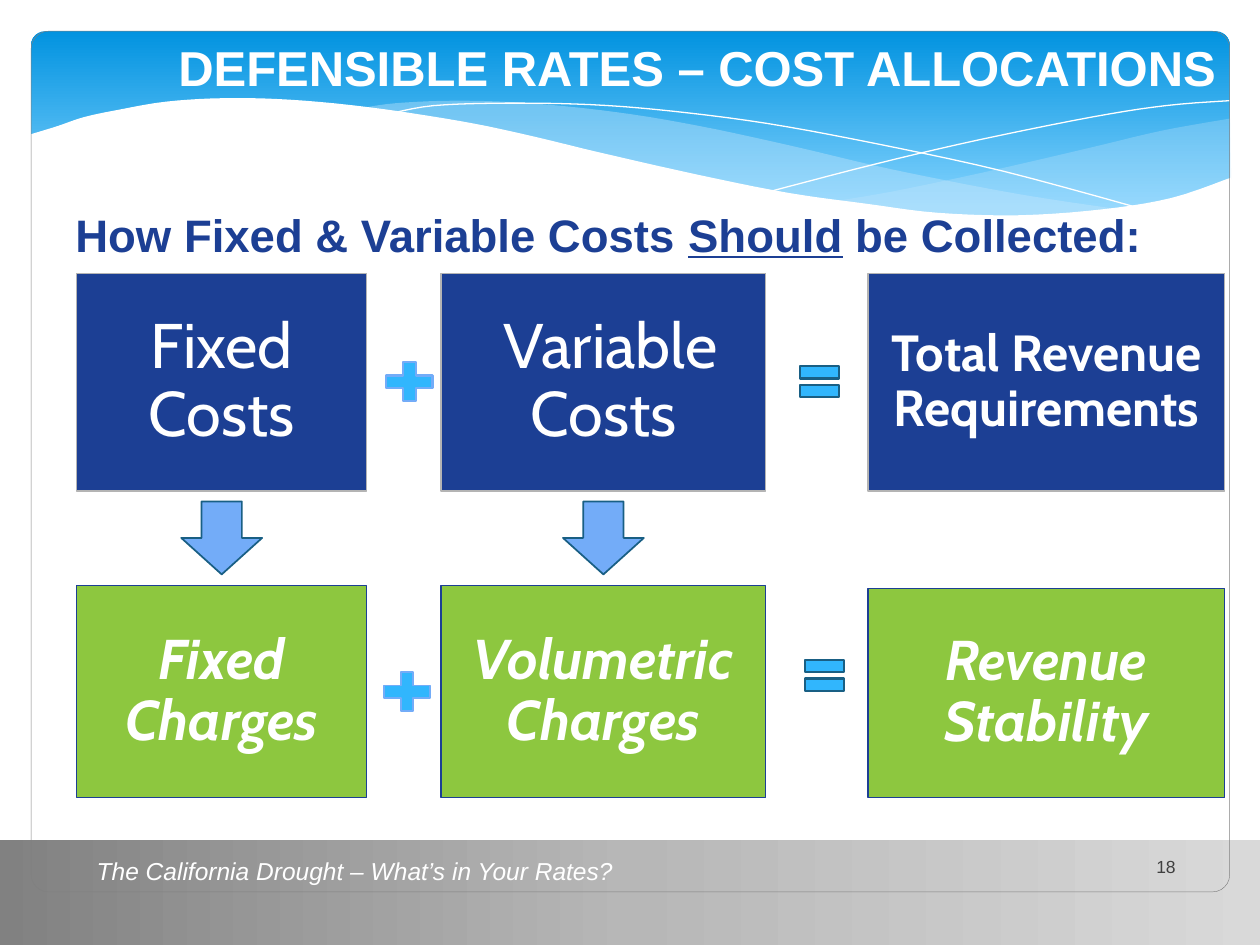
from copy import deepcopy
from dataclasses import dataclass

from lxml import etree
from pptx import Presentation
from pptx import util as u
from pptx.dml.color import RGBColor
from pptx.enum import shapes, text
from pptx.oxml.ns import qn

COLORS = {
    "white": "FFFFFF", "navy": "1C3F94", "green": "8DC73F", "sky": "31B6FD",
    "periwinkle": "73ACF8", "teal": "195F84", "silver": "B4B4B4",
    "mist": "C6E7FC", "frame": "808080", "number": "404040",
    "header_top": "0293E0", "header_bottom": "83D3FE",
    "footer_left": "818181", "footer_mid": "B7B7B7", "footer_right": "D9D9D9",
}
KIND = shapes.MSO_SHAPE
ALIGN = text.PP_ALIGN


@dataclass
class Area:
    left: float
    top: float
    width: float
    height: float

    def lengths(self) -> list:
        return [u.Cm(v) for v in (self.left, self.top, self.width, self.height)]


@dataclass
class Card:
    label: str
    area: Area
    fill: str
    line: str
    size: int
    inset: float
    bold: bool = True
    italic: bool = False


@dataclass
class Sign:
    kind: KIND
    area: Area
    fill: str
    line: str
    weight: float = 1.25


@dataclass
class Wave:
    """Smooth curves joined end to end; outlined if open, filled if closed."""
    curves: list
    fill: str = ""
    opacity: int = 100


def rgb(name: str) -> RGBColor:
    return RGBColor.from_string(COLORS[name])


def paint(shape, fill: str = "", line: str = "", weight: float = 0) -> None:
    shape.shadow.inherit = False
    if fill:
        shape.fill.solid()
        shape.fill.fore_color.rgb = rgb(fill)
    else:
        shape.fill.background()
    if line:
        shape.line.color.rgb = rgb(line)
        shape.line.width = u.Pt(weight)
    else:
        shape.line.fill.background()


def add_shape(page, kind, area: Area, fill="", line="", weight=0.0):
    shape = page.shapes.add_shape(kind, *area.lengths())
    paint(shape, fill, line, weight)
    return shape


def fade(shape, stops: list, angle: int) -> None:
    """Fill with a linear gradient of (position, colour) stops."""
    shape.fill.gradient()
    shape.fill.gradient_angle = angle
    stop_list = shape._element.spPr.find(".//" + qn("a:gsLst"))
    while len(stop_list) < len(stops):
        stop_list.append(deepcopy(stop_list[-1]))
    for stop, (position, color) in zip(shape.fill.gradient_stops, stops):
        stop.position = position
        stop.color.rgb = rgb(color)


def smooth(knots: list, steps: int = 5) -> list:
    """Catmull-Rom points through the knots."""
    padded = [knots[0], *knots, knots[-1]]
    points = [knots[0]]
    for a, b, c, d in zip(padded, padded[1:], padded[2:], padded[3:]):
        for step in range(1, steps + 1):
            t = step / steps
            points.append(tuple(
                q + t / 2 * (r - p + t * (2 * p - 5 * q + 4 * r - s
                                          + t * (3 * (q - r) + s - p)))
                for p, q, r, s in zip(a, b, c, d)))
    return points


def add_wave(page, wave: Wave) -> None:
    points = [(u.Cm(x), u.Cm(y)) for curve in wave.curves for x, y in smooth(curve)]
    builder = page.shapes.build_freeform(*points[0], scale=1.0)
    builder.add_line_segments(points[1:], close=bool(wave.fill))
    shape = builder.convert_to_shape()
    paint(shape, wave.fill, "" if wave.fill else "white")
    if wave.opacity < 100:
        color = shape._element.spPr.find(qn("a:solidFill"))[0]
        etree.SubElement(color, qn("a:alpha")).set("val", str(wave.opacity * 1000))


def set_font(font, size: int, color: str, name="Arial", bold=False, italic=False) -> None:
    font.name, font.size = name, u.Pt(size)
    font.bold, font.italic = bold, italic
    font.color.rgb = rgb(color)


def add_text(page, area: Area, spans: list, size: int, color: str,
             align=ALIGN.LEFT, bold=False, italic=False):
    """Add a one-paragraph box from (words, underlined) spans."""
    box = page.shapes.add_textbox(*area.lengths())
    box.text_frame.word_wrap = True
    para = box.text_frame.paragraphs[0]
    para.alignment = align
    set_font(para.font, size, color, bold=bold, italic=italic)
    for words, underlined in spans:
        span = para.add_run()
        span.text = words
        if underlined:
            span.font.underline = True
    return para


def add_card(page, card: Card) -> None:
    frame = add_shape(page, KIND.RECTANGLE, card.area, card.fill, card.line, 0.75).text_frame
    frame.word_wrap = True
    frame.vertical_anchor = text.MSO_ANCHOR.MIDDLE
    frame.margin_left = frame.margin_right = u.Cm(card.inset)
    frame.margin_top = frame.margin_bottom = u.Cm(card.inset)
    para = frame.paragraphs[0]
    para.text = card.label
    para.alignment = ALIGN.CENTER
    para.line_spacing = 0.9
    set_font(para.font, card.size, "white", "Cabin", card.bold, card.italic)


WAVES = [
    Wave([[(24.8, 2.39), (23.4, 2.64), (21.89, 3), (19.81, 3.48), (18, 3.86), (16.81, 4.06)],
          [(16.81, 4.06), (18.62, 4.29), (20.7, 4.37), (22.4, 4.27), (23.8, 4.01),
           (24.82, 3.61)]], "mist", 29),
    Wave([[(22.71, 4.24), (20.52, 3.91), (17.96, 3.41), (16, 2.95), (14.1, 2.54),
           (12.42, 2.26), (10.67, 2.08), (9.2, 2.03), (7.98, 2.08), (7.29, 2.18)],
          [(7.29, 2.18), (9.22, 2.46), (11.43, 2.95), (14.4, 3.63), (17.3, 4.14),
           (19.66, 4.37), (21.31, 4.37), (22.71, 4.24)]], "mist", 40),
    Wave([[(7.87, 2.29), (8.74, 2.13), (10.21, 2.08), (11.91, 2.11), (13.54, 2.24),
           (15.47, 2.49), (17.68, 2.9), (20.22, 3.45), (23.06, 4.22)]]),
    Wave([[(15.6, 3.84), (17.68, 3.3), (19.74, 2.82), (22.02, 2.36), (23.5, 2.13),
           (24.79, 2.03)]]),
    Wave([[(24.82, 3.58), (23.62, 3.99), (22.23, 4.22), (20.55, 4.34), (18.9, 4.29),
           (17.48, 4.11), (15.9, 3.89), (14.1, 3.53), (12.07, 3.07), (10.62, 2.72),
           (9.27, 2.44), (7.42, 2.16), (5.84, 2.01), (4.5, 1.98), (3.35, 2.05),
           (2.41, 2.21), (1.7, 2.36), (1.17, 2.54), (0.58, 2.72)],
          [(0.58, 5.69), (24.82, 5.69)]], "white"),
]
COLUMNS = [(1.55, 5.84), (8.89, 6.55), (17.5, 7.19)]
COSTS = [("Fixed Costs", 36, 0.46, False), (" Variable Costs", 36, 0.46, False),
         ("Total Revenue Requirements", 29, 0.3, True)]
CHARGES = [("Fixed Charges", 11.81, 0.5), ("Volumetric Charges", 11.81, 0.5),
           ("Revenue Stability", 11.86, 0.3)]
CHARGES_BOTTOM = 16.08
ARROW_WIDTH = 1.63
SIGNS = [
    Sign(KIND.MATH_PLUS, Area(7.62, 7.16, 1.27, 1.07), "sky", "periwinkle"),
    Sign(KIND.MATH_PLUS, Area(7.57, 13.41, 1.27, 1.07), "sky", "periwinkle", 1),
    Sign(KIND.MATH_EQUAL, Area(15.98, 7.16, 1.07, 1.07), "sky", "teal"),
    Sign(KIND.MATH_EQUAL, Area(16.08, 13.08, 1.07, 1.07), "sky", "teal"),
] + [
    Sign(KIND.DOWN_ARROW, Area(left + (width - ARROW_WIDTH) / 2, 10.11, ARROW_WIDTH, 1.47),
         "periwinkle", "teal", 1)
    for left, width in COLUMNS[:2]
]


def add_backdrop(page) -> None:
    header = add_shape(page, KIND.ROUNDED_RECTANGLE, Area(0.63, 0.63, 24.16, 3.96))
    header.adjustments[0] = 0.07
    fade(header, [(0, "header_top"), (0.9, "header_bottom")], 270)
    for wave in WAVES:
        add_wave(page, wave)
    footer = add_shape(page, KIND.RECTANGLE, Area(0, 16.93, 25.4, 2.12))
    fade(footer, [(0, "footer_left"), (0.5, "footer_mid"), (1, "footer_right")], 0)
    border = add_shape(page, KIND.ROUNDED_RECTANGLE, Area(0.63, 0.63, 24.16, 17.35),
                       line="frame", weight=0.25)
    border.adjustments[0] = 0.02


def main() -> None:
    deck = Presentation()
    deck.slide_width, deck.slide_height = u.Cm(25.4), u.Cm(19.05)
    page = deck.slides.add_slide(deck.slide_layouts[6])
    add_backdrop(page)
    add_text(page, Area(23.06, 17.14, 1.27, 0.69), [("18", False)], 10, "number")
    heading = add_text(page, Area(1.27, 4.01, 23.42, 12.9),
                       [("How Fixed & Variable Costs ", False), ("Should", True),
                        (" be Collected:", False)], 26, "navy", bold=True)
    heading.line_spacing = u.Pt(32)
    heading.space_after = u.Pt(12)
    for (left, width), (label, size, inset, bold) in zip(COLUMNS, COSTS):
        add_card(page, Card(label, Area(left, 5.51, width, 4.39), "navy", "silver",
                            size, inset, bold))
    for (left, width), (label, top, inset) in zip(COLUMNS, CHARGES):
        add_card(page, Card(label, Area(left, top, width, CHARGES_BOTTOM - top),
                            "green", "navy", 32, inset, italic=True))
    for sign in SIGNS:
        add_shape(page, sign.kind, sign.area, sign.fill, sign.line, sign.weight)
    add_text(page, Area(1.47, 0.63, 23.29, 1.45),
             [("DEFENSIBLE RATES – COST ALLOCATIONS", False)], 28, "white",
             ALIGN.RIGHT, bold=True)
    add_text(page, Area(1.7, 17.14, 11.63, 0.86),
             [("The California Drought – What’s in Your Rates?", False)], 14, "white",
             italic=True)
    deck.save("out.pptx")


if __name__ == "__main__":
    main()
